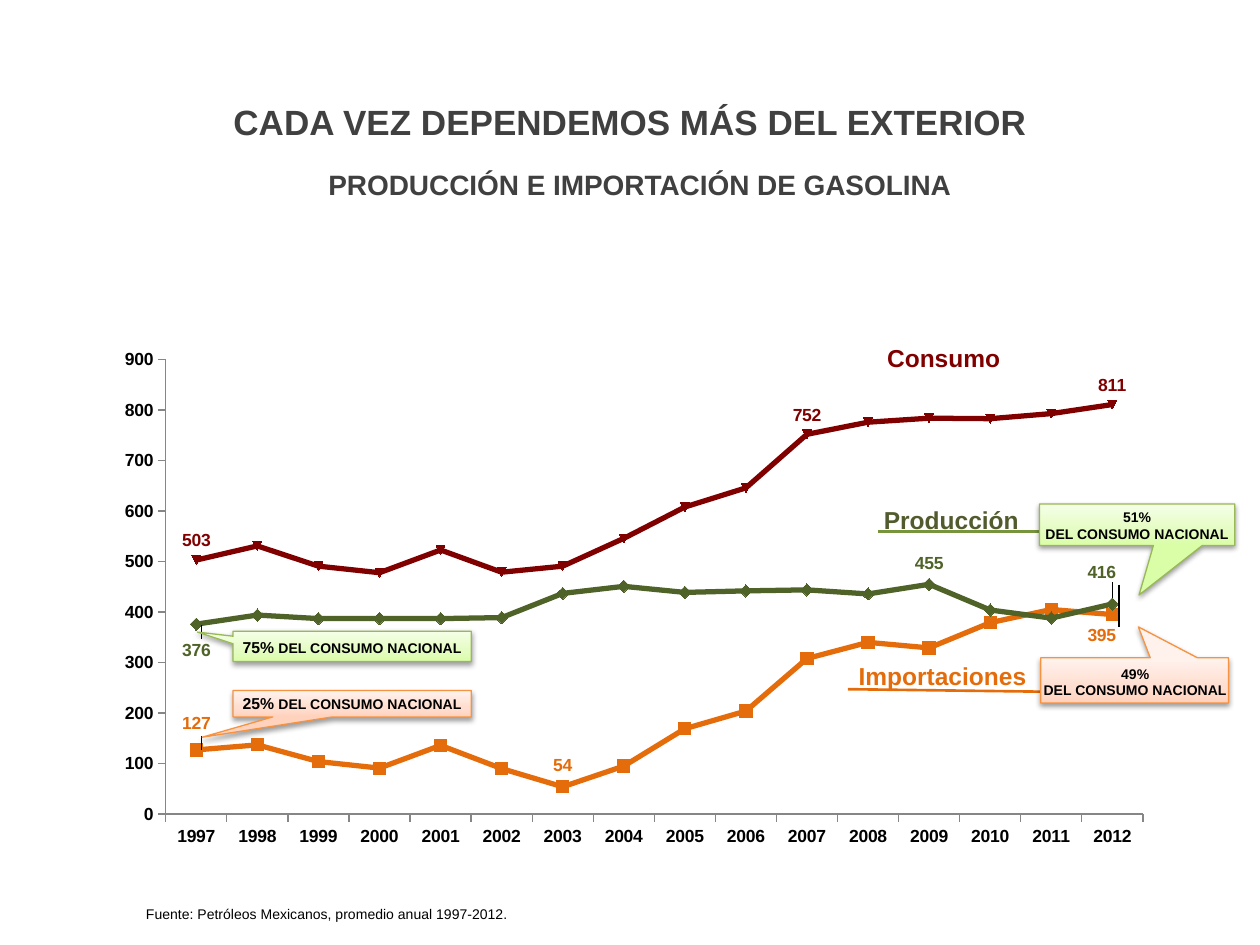
"""Builds the slide on gasoline production, imports and consumption."""
from dataclasses import dataclass

from pptx import Presentation
from pptx.chart.data import CategoryChartData
from pptx.dml.color import RGBColor
from pptx.enum.chart import XL_CHART_TYPE, XL_LABEL_POSITION, XL_MARKER_STYLE, XL_TICK_MARK
from pptx.enum.shapes import MSO_CONNECTOR, MSO_SHAPE
from pptx.enum.text import MSO_ANCHOR, MSO_AUTO_SIZE, PP_ALIGN
from pptx.oxml import parse_xml
from pptx.oxml.ns import nsdecls
from pptx.util import Inches, Pt

ABOVE, BELOW = XL_LABEL_POSITION.ABOVE, XL_LABEL_POSITION.BELOW
SQUARE, DIAMOND = XL_MARKER_STYLE.SQUARE, XL_MARKER_STYLE.DIAMOND
AUTOMATIC = XL_MARKER_STYLE.AUTOMATIC
LEFT, CENTER = PP_ALIGN.LEFT, PP_ALIGN.CENTER
TOP, MIDDLE = MSO_ANCHOR.TOP, MSO_ANCHOR.MIDDLE
COLUMNS, ROWS = 100, 75
WIDTH, HEIGHT = Inches(10), Inches(7.5)


@dataclass(frozen=True)
class Theme:
    font: str = "Arial"
    chart_font: str = "Lato"
    ink: str = "000000"
    heading: str = "404040"
    axis: str = "868686"
    imports: str = "E46C0A"
    production: str = "4F6228"
    production_name: str = "515B2D"
    production_rule: str = "77933C"
    consumption: str = "800000"
    orange_edge: str = "F69240"
    orange_stops: tuple = ("FFD2BD", "FFDED0", "FFF2ED")
    green_edge: str = "98B955"
    green_stops: tuple = ("DAFDA7", "E4FCC2", "F5FFE7")
    title_size: float = 20
    subtitle_size: float = 16
    name_size: float = 14
    chart_size: float = 10
    share_size: float = 9
    small_size: float = 8


THEME = Theme()


@dataclass(frozen=True)
class Box:
    column: float
    row: float
    columns: float
    rows: float

    def place(self) -> tuple:
        return (grid_x(self.column), grid_y(self.row),
                grid_x(self.columns), grid_y(self.rows))


@dataclass(frozen=True)
class Rule:
    start: tuple
    end: tuple
    color: str
    weight: float


@dataclass(frozen=True)
class Label:
    point: int
    position: XL_LABEL_POSITION
    shift: tuple = ()


@dataclass(frozen=True)
class Trend:
    name: str
    values: tuple
    color: str
    marker: XL_MARKER_STYLE
    marker_size: int
    labels: tuple


@dataclass(frozen=True)
class Callout:
    box: Box
    tail: tuple
    edge: str
    stops: tuple
    text_box: Box
    lines: tuple


TRENDS = (
    Trend("Importaciones", (127, 137, 104, 91, 136, 90, 54, 95, 169, 204, 308, 340, 329, 379, 405, 395),
          THEME.imports, SQUARE, 7, (Label(0, ABOVE, (0, -0.01)), Label(6, ABOVE), Label(15, BELOW, (-0.01, 0)))),
    Trend("Producción", (376, 394, 387, 387, 387, 389, 437, 451, 439, 442, 444, 436, 455, 404, 388, 416),
          THEME.production, DIAMOND, 7,
          (Label(0, BELOW, (0, 0.01)), Label(12, ABOVE), Label(15, ABOVE, (-0.01, -0.02)))),
    Trend("Consumo", (503, 531, 491, 478, 523, 479, 491, 546, 608, 646, 752, 776, 784, 783, 793, 811),
          THEME.consumption, AUTOMATIC, 5, (Label(0, ABOVE), Label(10, ABOVE), Label(15, ABOVE))),
)
NAME_RULES = (
    Rule((67.3, 54.7), (82.9, 54.9), THEME.imports, 1.5),
    Rule((69.7, 42.2), (84.6, 42.2), THEME.production_rule, 1.5),
)
LABEL_LEADERS = tuple(
    Rule((column, top), (column, bottom), THEME.ink, 0.75)
    for column, top, bottom in ((16, 49.6, 50.7), (16, 58.4, 59.5), (88.8, 46.4, 49.8)))
TREND_NAMES = (
    ("Importaciones", Box(65.7, 52, 18.2, 3.4), THEME.imports),
    ("Producción", Box(68.4, 39.6, 14.2, 3.4), THEME.production_name),
    ("Consumo", Box(67.8, 26.7, 14.2, 3.4), THEME.consumption),
)
ORANGE = (THEME.orange_edge, THEME.orange_stops)
GREEN = (THEME.green_edge, THEME.green_stops)
NATIONAL = ("DEL CONSUMO NACIONAL", THEME.small_size)
CALLOUTS = (
    Callout(Box(18.5, 54.8, 18.9, 2.1), (-0.63, 1.27), *ORANGE, Box(17.7, 54.6, 20.5, 2.5),
            ((("25% ", THEME.share_size), NATIONAL),)),
    Callout(Box(18.5, 50.1, 18.9, 2.4), (-0.65, -0.47), *GREEN, Box(17.7, 50.1, 20.5, 2.5),
            ((("75% ", THEME.share_size), NATIONAL),)),
    Callout(Box(82.5, 40, 15.5, 3.3), (0.01, 1.69), *GREEN, Box(81.4, 39.9, 17.7, 3.7),
            ((("51%", THEME.small_size),), (NATIONAL,))),
    Callout(Box(82.6, 52.2, 14.9, 3.6), (0.02, -1.18), *ORANGE, Box(81.7, 52.3, 16.8, 3.7),
            ((("49%", THEME.small_size),), (NATIONAL,))),
)


def grid_x(column: float) -> int:
    return round(WIDTH * column / COLUMNS)


def grid_y(row: float) -> int:
    return round(HEIGHT * row / ROWS)


def style(font, size: float, color: str, bold: bool = True, name: str = THEME.font) -> None:
    font.name, font.size, font.bold = name, Pt(size), bold
    font.color.rgb = RGBColor.from_string(color)


def write(frame, lines: tuple, color: str, bold: bool = True, align=CENTER, anchor=TOP) -> None:
    frame.word_wrap, frame.vertical_anchor = True, anchor
    for index, runs in enumerate(lines):
        paragraph = frame.add_paragraph() if index else frame.paragraphs[0]
        paragraph.alignment = align
        style(paragraph.font, runs[0][1], color, bold)
        for words, size in runs:
            run = paragraph.add_run()
            run.text = words
            if size != runs[0][1]:
                run.font.size = Pt(size)


def add_words(slide, box: Box, lines: tuple, color: str, **options) -> None:
    frame = slide.shapes.add_textbox(*box.place()).text_frame
    write(frame, lines, color, **options)
    frame.auto_size = MSO_AUTO_SIZE.SHAPE_TO_FIT_TEXT


def add_rule(slide, rule: Rule) -> None:
    ends = [grid(value) for point in (rule.start, rule.end)
            for grid, value in zip((grid_x, grid_y), point)]
    line = slide.shapes.add_connector(MSO_CONNECTOR.STRAIGHT, *ends)
    line.line.color.rgb = RGBColor.from_string(rule.color)
    line.line.width = Pt(rule.weight)
    line._element.spPr.append(parse_xml(f"<a:effectLst {nsdecls('a')}/>"))


def add_callout(slide, callout: Callout) -> None:
    bubble = slide.shapes.add_shape(MSO_SHAPE.RECTANGULAR_CALLOUT, *callout.box.place())
    bubble.adjustments[0], bubble.adjustments[1] = callout.tail
    bubble.line.color.rgb = RGBColor.from_string(callout.edge)
    bubble.line.width = Pt(0.75)
    stops = "".join(f'<a:gs pos="{share}000"><a:srgbClr val="{color}"/></a:gs>'
                    for share, color in zip((0, 35, 100), callout.stops))
    properties = bubble._element.spPr
    properties.prstGeom.addnext(parse_xml(
        f'<a:gradFill {nsdecls("a")} rotWithShape="1"><a:gsLst>{stops}</a:gsLst>'
        '<a:lin ang="16200000" scaled="1"/></a:gradFill>'))
    properties.append(parse_xml(
        f'<a:effectLst {nsdecls("a")}><a:outerShdw blurRad="{Pt(3.1)}" dist="{Pt(1.6)}" dir="5400000" '
        'rotWithShape="0"><a:srgbClr val="000000"><a:alpha val="38000"/></a:srgbClr>'
        '</a:outerShdw></a:effectLst>'))
    add_words(slide, callout.text_box, callout.lines, THEME.ink)


def manual_layout(settings: tuple):
    entries = "".join(f'<c:{key} val="{value}"/>' for key, value in settings)
    return parse_xml(f'<c:layout {nsdecls("c")}><c:manualLayout>{entries}</c:manualLayout></c:layout>')


def add_label(series, label: Label, color: str) -> None:
    tag = series.points[label.point].data_label
    style(tag.font, THEME.chart_size, color)
    tag.position = label.position
    if label.shift:
        index = series._element.xpath(f'c:dLbls/c:dLbl/c:idx[@val="{label.point}"]')[0]
        index.addnext(manual_layout(tuple(zip("xy", label.shift))))


def add_trends(slide, box: Box) -> None:
    data = CategoryChartData(number_format="0")
    data.categories = [str(year) for year in range(1997, 2013)]
    for trend in TRENDS:
        data.add_series(trend.name, trend.values)
    chart = slide.shapes.add_chart(XL_CHART_TYPE.LINE_MARKERS, *box.place(), data).chart
    chart.has_legend = chart.has_title = False
    style(chart.font, THEME.chart_size, THEME.ink, False, THEME.chart_font)
    for axis in (chart.category_axis, chart.value_axis):
        axis.has_major_gridlines = False
        axis.major_tick_mark = XL_TICK_MARK.OUTSIDE
        axis.format.line.color.rgb = RGBColor.from_string(THEME.axis)
        style(axis.tick_labels.font, THEME.chart_size, THEME.ink)
    scale = chart.value_axis
    scale.minimum_scale, scale.maximum_scale, scale.major_unit = 0, 900, 100
    plot = chart.plots[0]
    plot.vary_by_categories = False
    for series, trend in zip(plot.series, TRENDS):
        color = RGBColor.from_string(trend.color)
        series.smooth = False
        series.format.line.color.rgb, series.format.line.width = color, Pt(3)
        series.marker.style, series.marker.size = trend.marker, trend.marker_size
        series.marker.format.fill.solid()
        series.marker.format.fill.fore_color.rgb = color
        series.marker.format.line.color.rgb = color
        series.data_labels.show_value = False
        for label in trend.labels:
            add_label(series, label, trend.color)
    area = chart._chartSpace.chart.plotArea
    for layout in area.xpath("c:layout"):
        area.remove(layout)
    area.insert(0, manual_layout((("layoutTarget", "inner"), ("xMode", "edge"), ("yMode", "edge"),
                                  ("x", 0.06), ("y", 0.04), ("w", 0.92), ("h", 0.88))))


def main() -> None:
    deck = Presentation()
    deck.slide_width, deck.slide_height = WIDTH, HEIGHT
    slide = deck.slides.add_slide(deck.slide_layouts.get_by_name("Title Only"))
    title = slide.shapes.title
    title.left, title.top, title.width, title.height = Box(12.2, 7.5, 75.6, 5.6).place()
    write(title.text_frame, ((("CADA VEZ DEPENDEMOS MÁS DEL EXTERIOR", THEME.title_size),),), THEME.heading)
    for rule in NAME_RULES:
        add_rule(slide, rule)
    add_trends(slide, Box(8.1, 26.9, 84.3, 41))
    for rule in LABEL_LEADERS:
        add_rule(slide, rule)
    add_words(slide, Box(10.6, 71.4, 86.8, 2.4),
              ((("Fuente: Petróleos Mexicanos, promedio anual 1997-2012.", THEME.small_size),),),
              THEME.ink, bold=False, align=LEFT)
    for name, box, color in TREND_NAMES:
        add_words(slide, box, (((name, THEME.name_size),),), color)
    for callout in CALLOUTS:
        add_callout(slide, callout)
    subtitle = slide.shapes.add_textbox(*Box(13, 10.8, 75.6, 7.7).place())
    write(subtitle.text_frame, ((("PRODUCCIÓN E IMPORTACIÓN DE GASOLINA", THEME.subtitle_size),),),
          THEME.heading, anchor=MIDDLE)
    deck.save("out.pptx")


if __name__ == "__main__":
    main()
